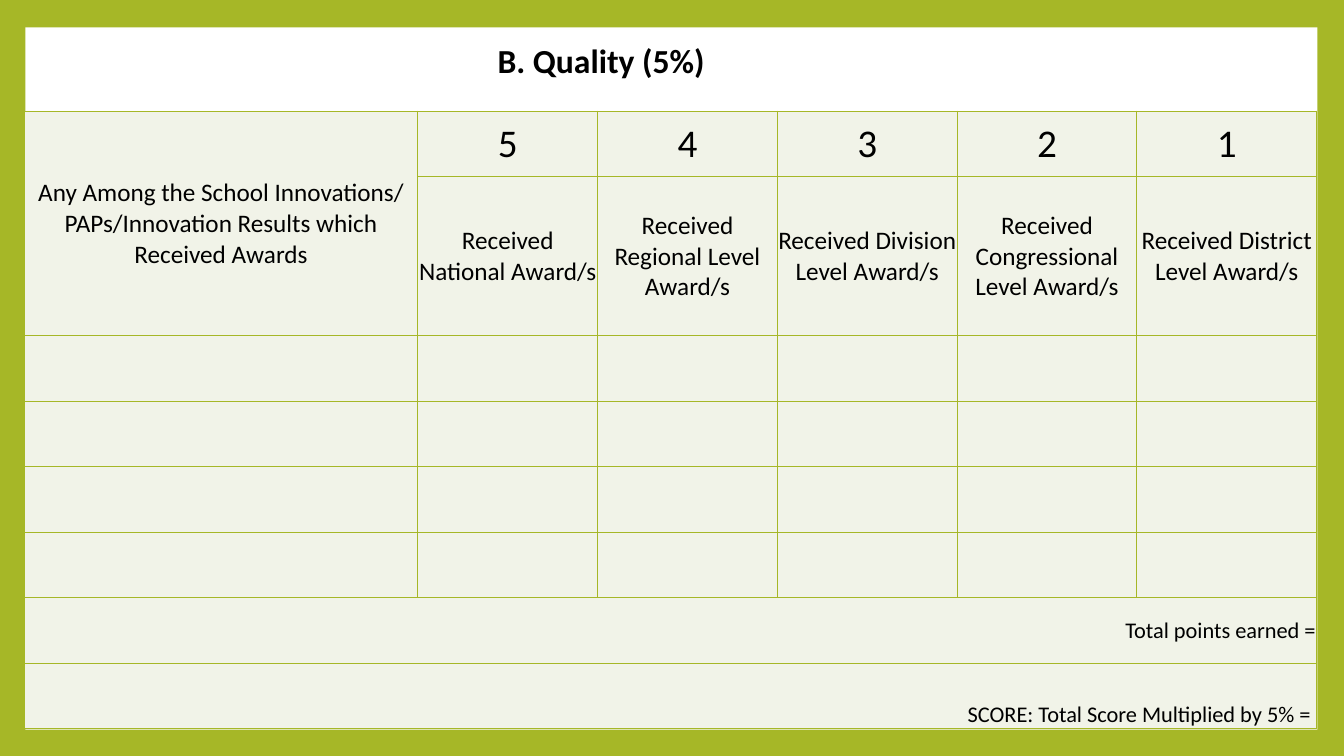
from lxml.etree import SubElement
from pptx import Presentation
from pptx.dml.color import RGBColor
from pptx.enum.shapes import MSO_SHAPE
from pptx.enum.text import MSO_ANCHOR as Anchor, PP_ALIGN as Align
from pptx.oxml.ns import qn
from pptx.util import Cm, Pt

GREEN = RGBColor(0xA6, 0xB7, 0x27)
PALE_GREEN = RGBColor(0xF1, 0xF3, 0xE8)
WHITE = RGBColor(0xFF, 0xFF, 0xFF)
BLACK = RGBColor(0x00, 0x00, 0x00)

CRITERION = "Any Among the School Innovations/ PAPs/Innovation Results which Received Awards"
AWARDS_BY_POINTS = {
    5: "Received National Award/s",
    4: "Received Regional Level Award/s",
    3: "Received Division Level Award/s",
    2: "Received Congressional Level Award/s",
    1: "Received District Level Award/s",
}
ROW_COUNT = 8
TOTAL_ROW, SCORE_ROW = 6, 7
COLUMN_COUNT = 1 + len(AWARDS_BY_POINTS)


def write_text(frame, text, size=18, bold=False, align=Align.CENTER, before=0, after=0):
    frame.word_wrap = True
    paragraph = frame.paragraphs[0]
    paragraph.alignment = align
    paragraph.space_before = Pt(before)
    paragraph.space_after = Pt(after)
    run = paragraph.add_run()
    run.text = text
    run.font.name = "Calibri"
    run.font.size = Pt(size)
    run.font.bold = bold
    run.font.color.rgb = BLACK


def add_panel(slide):
    panel = slide.shapes.add_shape(MSO_SHAPE.RECTANGLE, Cm(0.64), Cm(0.69), Cm(32.56), Cm(17.7))
    panel.shadow.inherit = False
    panel.fill.solid()
    panel.fill.fore_color.rgb = WHITE
    panel.line.fill.background()


def add_title(slide, text):
    frame = slide.shapes.add_textbox(Cm(12.29), Cm(1.02), Cm(10.03), Cm(0.99)).text_frame
    frame.vertical_anchor = Anchor.MIDDLE
    write_text(frame, text, size=24, bold=True, align=Align.LEFT, before=4.8, after=6)


def style_cell(cell):
    """Set narrow margins, 1 pt green borders and a pale fill."""
    cell.margin_left = cell.margin_right = cell.margin_top = Cm(0.02)
    cell.margin_bottom = 0
    cell.vertical_anchor = Anchor.MIDDLE
    properties = cell._tc.get_or_add_tcPr()
    for side in ("a:lnL", "a:lnR", "a:lnT", "a:lnB"):
        border = SubElement(properties, qn(side), w=str(Pt(1)))
        fill = SubElement(border, qn("a:solidFill"))
        SubElement(fill, qn("a:srgbClr"), val=str(GREEN))
    cell.fill.solid()
    cell.fill.fore_color.rgb = PALE_GREEN


def add_rating_table(slide):
    table = slide.shapes.add_table(
        ROW_COUNT, COLUMN_COUNT, Cm(0.61), Cm(2.8), Cm(32.56), Cm(15.54)).table
    table.first_row = table.horz_banding = False
    for index, column in enumerate(table.columns):
        column.width = Cm(9.92 if index == 0 else 4.53)
    for index, row in enumerate(table.rows):
        row.height = Cm(4.01 if index == 1 else 1.65)
    for cell in table.iter_cells():
        style_cell(cell)

    table.cell(0, 0).merge(table.cell(1, 0))
    write_text(table.cell(0, 0).text_frame, CRITERION)
    for column, (points, award) in enumerate(AWARDS_BY_POINTS.items(), start=1):
        write_text(table.cell(0, column).text_frame, str(points), size=28)
        write_text(table.cell(1, column).text_frame, award)

    for row, text in ((TOTAL_ROW, "Total points earned ="),
                      (SCORE_ROW, "SCORE: Total Score Multiplied by 5% = ")):
        table.cell(row, 0).merge(table.cell(row, COLUMN_COUNT - 1))
        write_text(table.cell(row, 0).text_frame, text, size=16, align=Align.RIGHT)
    table.cell(SCORE_ROW, 0).vertical_anchor = Anchor.BOTTOM


def main():
    presentation = Presentation()
    presentation.slide_width = Cm(33.87)
    presentation.slide_height = Cm(19.05)
    slide = presentation.slides.add_slide(presentation.slide_layouts[6])
    slide.background.fill.solid()
    slide.background.fill.fore_color.rgb = GREEN
    add_panel(slide)
    add_title(slide, "B. Quality (5%)")
    add_rating_table(slide)
    presentation.save("out.pptx")


if __name__ == "__main__":
    main()
